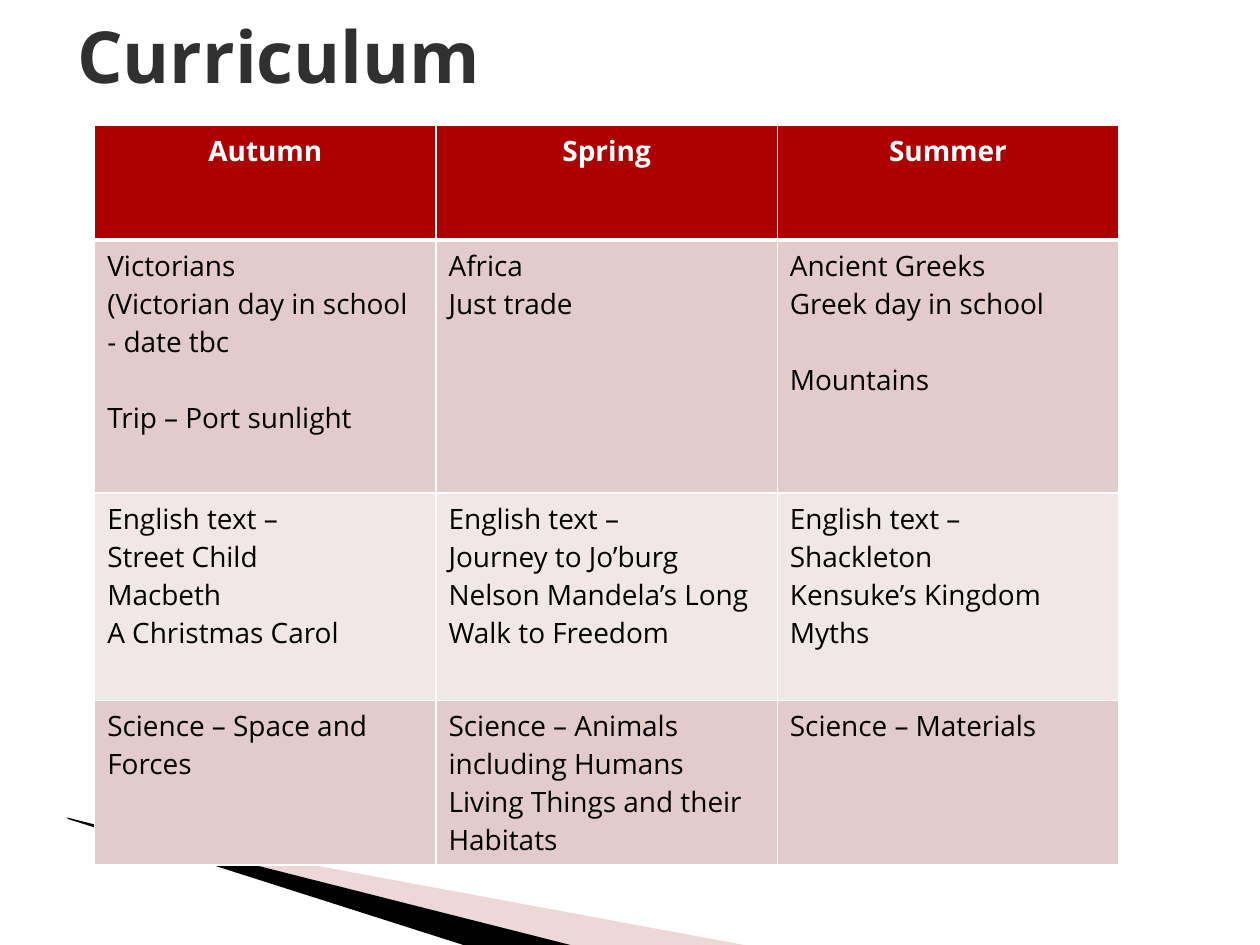
import pptx
import pptx.dml.color
import pptx.enum.text
import pptx.oxml
import pptx.oxml.ns
import pptx.util
from lxml import etree

Cm = pptx.util.Cm
Pt = pptx.util.Pt

COLOURS = {
    "title": "303030",
    "header": "AD0101",
    "band_dark": "E3CBCB",
    "band_light": "F1E7E7",
    "white": "FFFFFF",
    "black": "000000",
    "pink": "D29C9C",
}

TERMS = ["Autumn", "Spring", "Summer"]
GAP = ""
TOPICS = [
    ["Victorians", "(Victorian day in school - date tbc", GAP, "Trip – Port sunlight"],
    ["Africa", "Just trade"],
    ["Ancient Greeks", "Greek day in school", GAP, "Mountains"],
]
ENGLISH = [
    ["English text –", "Street Child", "Macbeth", "A Christmas Carol"],
    ["English text –", "Journey to Jo’burg", "Nelson Mandela’s Long Walk to Freedom"],
    ["English text –", "Shackleton", "Kensuke’s Kingdom", "Myths"],
]
SCIENCE = [
    ["Science – Space and Forces"],
    ["Science – Animals including Humans", "Living Things and their Habitats"],
    ["Science – Materials"],
]
BODY_ROWS = [TOPICS, ENGLISH, SCIENCE]
ROW_HEIGHTS = [2.32, 5.1, 4.18, 3.3]
COLUMN_WIDTH = 6.88

PINK_WEDGE = [(1.4, 16.53), (15.0, 19.05), (11.48, 19.05), (1.4, 16.51)]
BLACK_WEDGE = [(1.35, 16.48), (11.5, 19.05), (9.34, 19.05), (1.37, 16.51)]


class SlideBuilder:
    """Holds the style and the current slide, and adds each kind of element."""

    font = "Open Sans"
    title_size = Pt(41)
    cell_size = Pt(16)
    line_gap = Pt(21.8)

    def __init__(self, slide):
        self.slide = slide

    def colour(self, name):
        return pptx.dml.color.RGBColor.from_string(COLOURS[name])

    def style(self, paragraph, size, colour, bold=False):
        paragraph.font.name = self.font
        paragraph.font.size = size
        paragraph.font.bold = bold
        paragraph.font.color.rgb = self.colour(colour)

    def wedge(self, points, colour, opacity=100):
        corners = [(Cm(x), Cm(y)) for x, y in points]
        outline = self.slide.shapes.build_freeform(*corners[0])
        outline.add_line_segments(corners[1:], close=True)
        wedge = outline.convert_to_shape()
        wedge.shadow.inherit = False
        wedge.line.fill.background()
        wedge.fill.solid()
        wedge.fill.fore_color.rgb = self.colour(colour)
        if opacity < 100:
            tint = wedge.fill._xPr.find(".//" + pptx.oxml.ns.qn("a:srgbClr"))
            etree.SubElement(tint, pptx.oxml.ns.qn("a:alpha"), val=str(opacity * 1000))

    def title(self, text, left, top, width, height):
        title = self.slide.shapes.title
        title.left, title.top = Cm(left), Cm(top)
        title.width, title.height = Cm(width), Cm(height)
        frame = title.text_frame
        frame.text = text
        frame.auto_size = pptx.enum.text.MSO_AUTO_SIZE.NONE
        frame.vertical_anchor = pptx.enum.text.MSO_ANCHOR.MIDDLE
        paragraph = frame.paragraphs[0]
        paragraph.alignment = pptx.enum.text.PP_ALIGN.LEFT
        self.style(paragraph, self.title_size, "title", bold=True)

    def borders(self, cell, top, bottom):
        properties = cell._tc.get_or_add_tcPr()
        for side, points in (("L", 1), ("R", 1), ("T", top), ("B", bottom)):
            properties.append(pptx.oxml.parse_xml(
                f'<a:ln{side} {pptx.oxml.ns.nsdecls("a")} w="{Pt(points)}"><a:solidFill>'
                f'<a:srgbClr val="{COLOURS["white"]}"/></a:solidFill></a:ln{side}>'))

    def cell(self, cell, lines, fill, header=False, below_header=False):
        self.borders(cell, 3 if below_header else 1, 3 if header else 1)
        cell.fill.solid()
        cell.fill.fore_color.rgb = self.colour(fill)
        cell.text = "\n".join(line for line in lines if line != GAP)
        after_gap = [lines[i - 1] == GAP for i in range(len(lines)) if lines[i] != GAP]
        for paragraph, spaced in zip(cell.text_frame.paragraphs, after_gap):
            if spaced:
                paragraph.space_before = self.line_gap
            if header:
                paragraph.alignment = pptx.enum.text.PP_ALIGN.CENTER
            self.style(paragraph, self.cell_size, "white" if header else "black", header)

    def curriculum_table(self, left, top):
        table = self.slide.shapes.add_table(
            len(ROW_HEIGHTS), len(TERMS), Cm(left), Cm(top),
            Cm(COLUMN_WIDTH * len(TERMS)), Cm(sum(ROW_HEIGHTS))).table
        for row, height in zip(table.rows, ROW_HEIGHTS):
            row.height = Cm(height)
        for column, term in enumerate(TERMS):
            table.columns[column].width = Cm(COLUMN_WIDTH)
            self.cell(table.cell(0, column), [term], "header", header=True)
        for row, subjects in enumerate(BODY_ROWS, start=1):
            band = "band_dark" if row % 2 else "band_light"
            for column, lines in enumerate(subjects):
                self.cell(table.cell(row, column), lines, band, below_header=row == 1)


def main():
    deck = pptx.Presentation()
    deck.slide_width, deck.slide_height = Cm(25.4), Cm(19.05)
    builder = SlideBuilder(deck.slides.add_slide(deck.slide_layouts[5]))
    builder.wedge(PINK_WEDGE, "pink", opacity=40)
    builder.wedge(BLACK_WEDGE, "black")
    builder.title("Curriculum", 1.3, -0.48, 22.86, 3.18)
    builder.curriculum_table(1.91, 2.52)
    deck.save("out.pptx")


if __name__ == "__main__":
    main()
